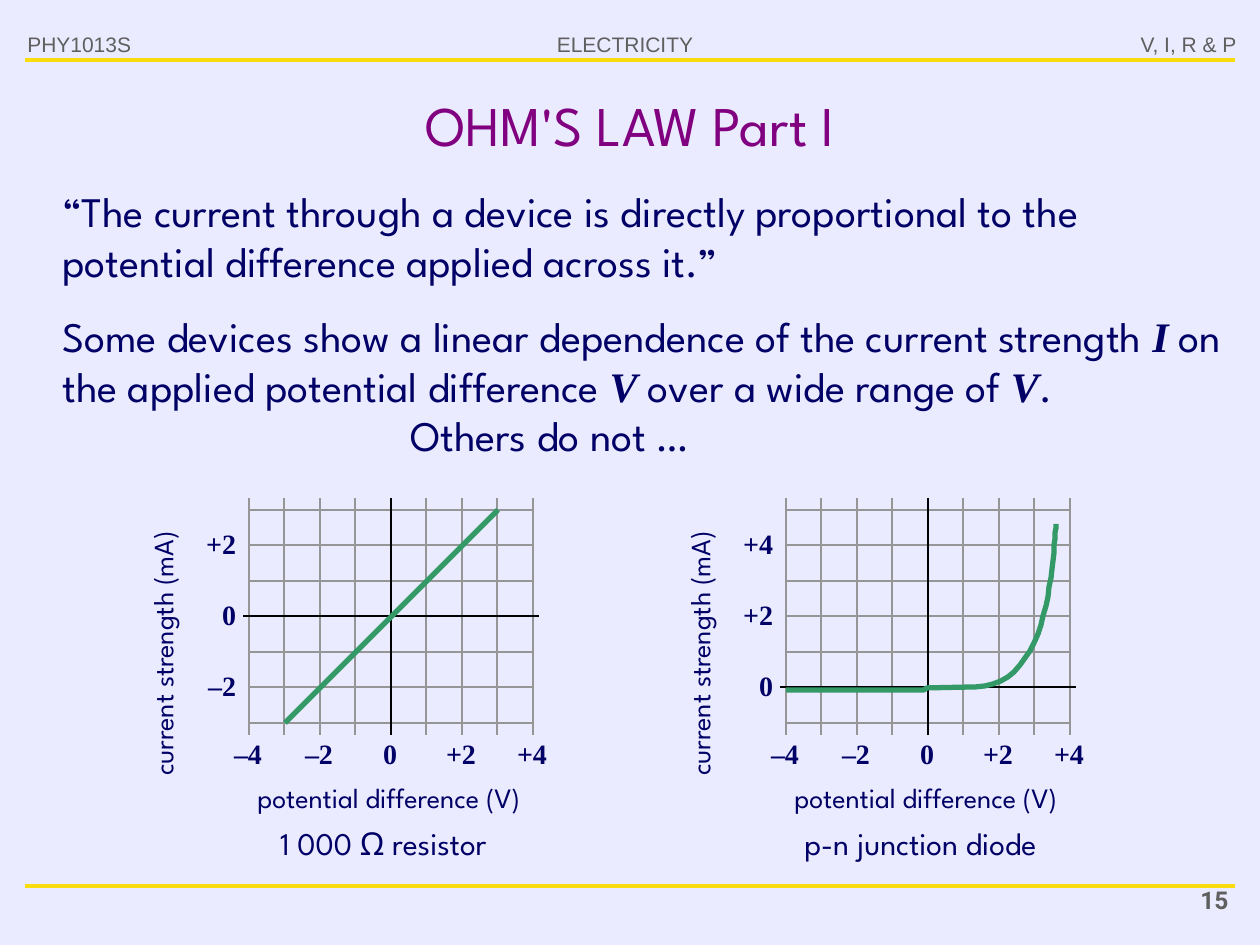
from lxml import etree
from pptx import Presentation
from pptx.dml.color import RGBColor
from pptx.enum.shapes import MSO_CONNECTOR
from pptx.enum.text import MSO_ANCHOR as ANCHOR, MSO_AUTO_SIZE as FIT, PP_ALIGN as ALIGN
from pptx.oxml.ns import qn
from pptx.util import Emu, Pt

PX = 914400 / 126
SPARTAN, TIMES = "League Spartan", "Times New Roman"
NAVY, GREY, GREEN = "000066", "5F5F5F", "339966"
color = RGBColor.from_string


def write(box, place, runs, size, font, hue, align=ALIGN.LEFT, bold=False,
          inset=True, spacing=None, indent=0):
    """Place a box (px) and fill its one paragraph; runs in a list alternate with bold italic symbols."""
    box.left, box.top, box.width, box.height = (Emu(round(n * PX)) for n in place)
    frame = box.text_frame
    frame.word_wrap, frame.auto_size = True, FIT.NONE
    if not inset:
        for side in ("left", "top", "right", "bottom"):
            setattr(frame, f"margin_{side}", 0)
    para = frame.paragraphs[0]
    props = para._p.get_or_add_pPr()
    props.set("marL", str(round(indent * PX)))
    props.set("indent", "0")
    etree.SubElement(props, qn("a:buNone"))
    para.alignment, para.space_before = align, Pt(0)
    if spacing:
        para.line_spacing = spacing
    for i, text in enumerate([runs] if isinstance(runs, str) else runs):
        symbol = i % 2 == 1
        span = para.add_run()
        span.text = text
        formats = {"size": Pt(size), "name": TIMES if symbol else font,
                   "bold": symbol or bold, "italic": symbol}
        for key, value in formats.items():
            setattr(span.font, key, value)
        span.font.color.rgb = color(hue)
    return frame


def draw_line(x1, y1, x2, y2, hue, weight):
    line = page.shapes.add_connector(
        MSO_CONNECTOR.STRAIGHT, *(Emu(round(n * PX)) for n in (x1, y1, x2, y2)))
    line.line.color.rgb, line.line.width = color(hue), Pt(weight)
    etree.SubElement(line._element.spPr, qn("a:effectLst"))


deck = Presentation()
deck.slide_width, deck.slide_height = Emu(round(1260 * PX)), Emu(round(945 * PX))
page = deck.slides.add_slide(deck.slide_layouts[1])
page.background.fill.solid()
page.background.fill.fore_color.rgb = color("EBEBFF")
new_box = lambda: page.shapes.add_textbox(0, 0, 0, 0)

# Header and footer
for y in (60, 886):
    draw_line(25, y, 1235, y, "F8DC0E", 1.75)
for text, place, align in (
        ("PHY1013S", (15, 25, 149, 40), ALIGN.LEFT),
        ("ELECTRICITY", (535, 25, 180, 38), ALIGN.CENTER),
        ("V, I, R & P", (1119, 25, 130, 38), ALIGN.RIGHT)):
    write(new_box(), place, text, 12, "Arial", GREY, align)
write(new_box(), (1111, 879, 130, 47), "15", 14, "Roboto", GREY, ALIGN.RIGHT, bold=True)

# Title and statements
title, body = page.placeholders
frame = write(title, (63, 79, 1134, 91), "OHM'S LAW Part I", 32, SPARTAN, "800080", ALIGN.CENTER)
frame.vertical_anchor = ANCHOR.MIDDLE
write(body, (25, 179, 1210, 113),
      "“The current through a device is directly proportional to the potential "
      "difference applied across it.”", 24, SPARTAN, NAVY, indent=25)
write(new_box(), (25, 304, 1210, 164),
      ["Some devices show a linear dependence of the current strength ", "I",
       " on the applied potential difference ", "V", " over a wide range of ", "V", "."],
      24, SPARTAN, NAVY, indent=25)
write(new_box(), (335, 403, 428, 63), "Others do not …", 24, SPARTAN, NAVY, indent=63)

# Two graphs on the same grid: left edge, row of the x axis, y labels, caption
TOP, BOTTOM, WIDTH = 498, 735, 284
rows = [510 + j * 71 // 2 for j in range(7)]
for left, zero_row, y_labels, caption in (
        (249, 3, ("+2", "0", "–2"), "1 000 Ω resistor"),
        (786, 5, ("+4", "+2", "0"), "p-n junction diode")):
    columns = [left + i * 71 // 2 for i in range(9)]
    for x in columns:
        draw_line(x, TOP, x, BOTTOM, "969696", 0.75)
    for y in rows:
        draw_line(left, y, left + WIDTH, y, "969696", 0.75)
    draw_line(columns[4], TOP, columns[4], BOTTOM, "000000", 1.25)
    draw_line(left - 6, rows[zero_row], left + WIDTH + 6, rows[zero_row], "000000", 1.25)

    small = {"inset": False, "spacing": 1.1}
    for text, y in zip(y_labels, rows[1::2]):
        write(new_box(), (left - 56, y - 22, 43, 37), text, 16, TIMES, NAVY,
              ALIGN.RIGHT, bold=True, **small)
    for text, x in zip(("–4", "–2", "0", "+2", "+4"), columns[::2]):
        write(new_box(), (x - 28, 733, 54, 37), text, 16, TIMES, NAVY,
              ALIGN.CENTER, bold=True, **small)
    write(new_box(), (left - 22, 777, 324, 39), "potential difference (V)", 16, SPARTAN,
          NAVY, ALIGN.CENTER, **small)
    write(new_box(), (left - 37, 820, 343, 43), caption, 18, SPARTAN, NAVY,
          ALIGN.CENTER, **small)
    frame = write(new_box(), (left - 107, 474, 43, 302), "current strength (mA)", 16,
                  SPARTAN, NAVY, **small)
    frame._txBody.bodyPr.set("vert", "vert270")

# Resistor: straight line
draw_line(285, 723, 498, 510, GREEN, 3)

# Diode: flat, then a steep Bézier rise
rise = [(976, 687), (1052, 687), (1053, 551), (1056, 524)]
STEPS = 24
points = [(924, 690), (927, 688)]
for step in range(STEPS + 1):
    t = step / STEPS
    weights = ((1 - t) ** 3, 3 * t * (1 - t) ** 2, 3 * t * t * (1 - t), t ** 3)
    points.append(tuple(sum(w * p[axis] for w, p in zip(weights, rise)) for axis in (0, 1)))
builder = page.shapes.build_freeform(786, 690, scale=PX)
builder.add_line_segments(points, close=False)
curve = builder.convert_to_shape()
curve.shadow.inherit = False
curve.fill.background()
curve.line.color.rgb, curve.line.width = color(GREEN), Pt(3)

deck.save("out.pptx")
